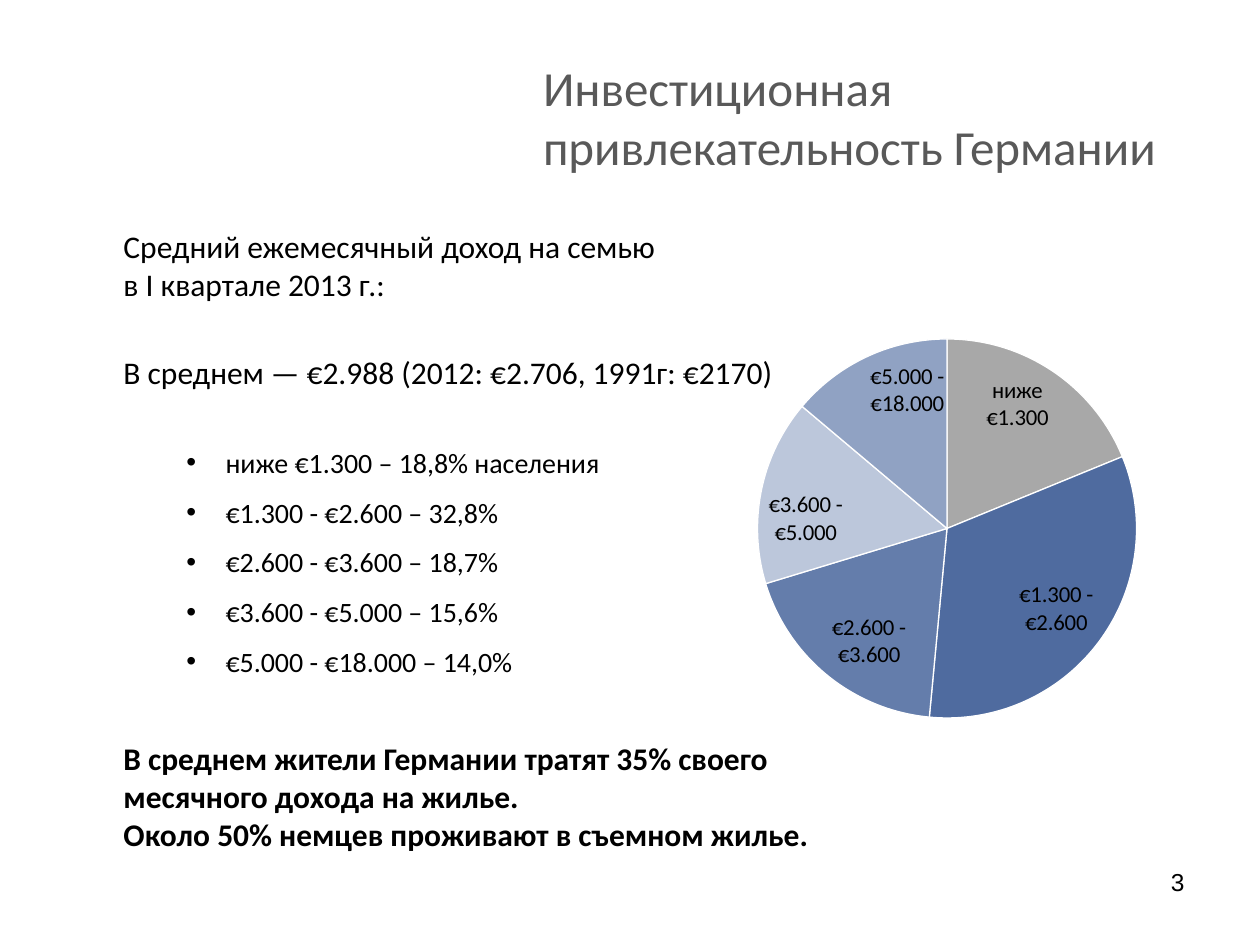
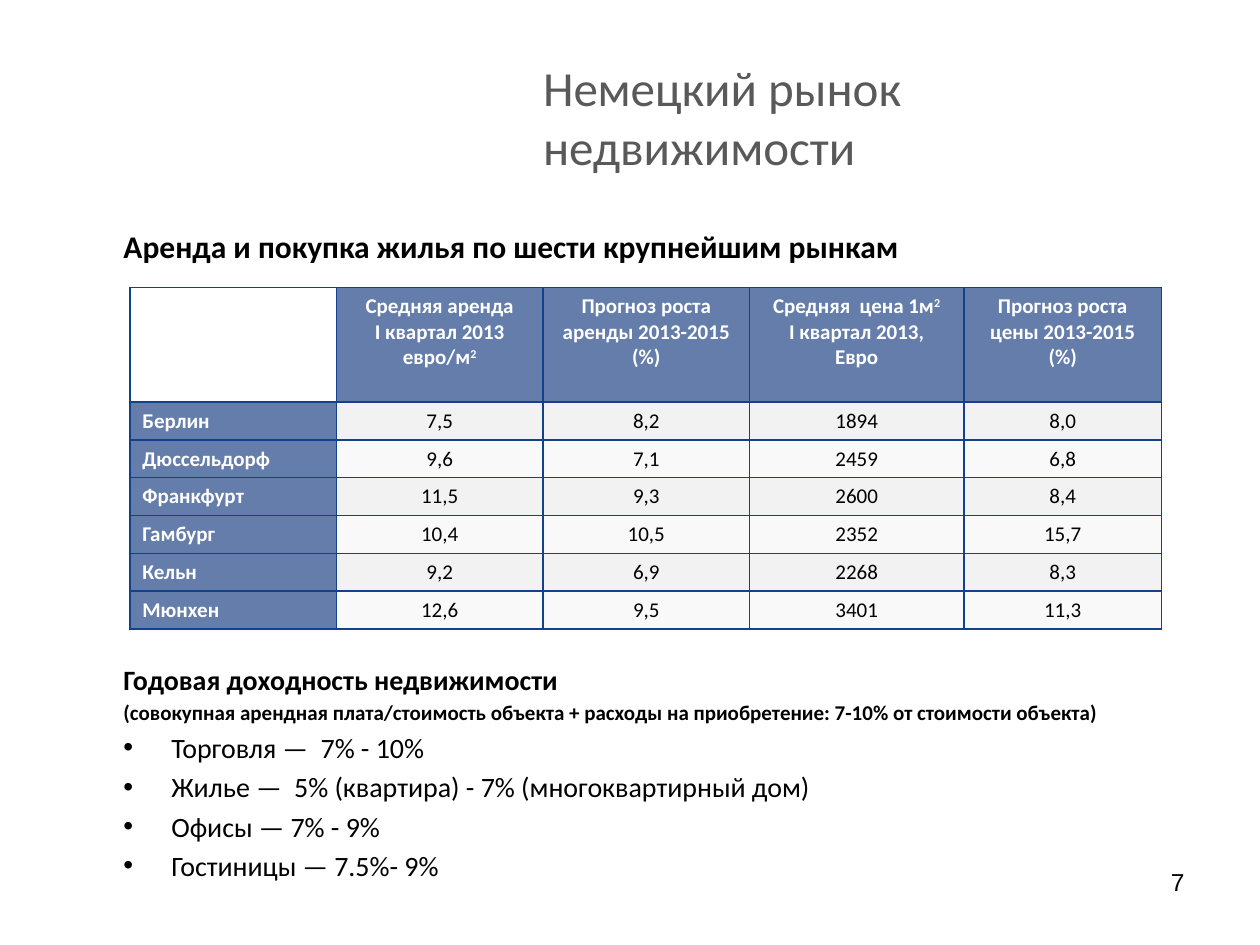
from dataclasses import dataclass

from lxml import etree
from pptx import Presentation
from pptx.chart.data import CategoryChartData
from pptx.dml.color import RGBColor
from pptx.enum.chart import XL_CHART_TYPE, XL_LABEL_POSITION
from pptx.enum.text import MSO_ANCHOR, MSO_AUTO_SIZE, PP_ALIGN
from pptx.oxml import parse_xml
from pptx.oxml.ns import nsdecls, qn
from pptx.util import Inches, Pt

PIE = XL_CHART_TYPE.PIE
INSIDE_END = XL_LABEL_POSITION.INSIDE_END
MIDDLE, TOP = MSO_ANCHOR.MIDDLE, MSO_ANCHOR.TOP
NO_AUTOFIT = MSO_AUTO_SIZE.NONE
LEFT, CENTER, RIGHT = PP_ALIGN.LEFT, PP_ALIGN.CENTER, PP_ALIGN.RIGHT

BLACK = RGBColor(0x00, 0x00, 0x00)
WHITE = RGBColor(0xFF, 0xFF, 0xFF)
TITLE_GRAY = RGBColor(0x59, 0x59, 0x59)
SLICE_GRAY = RGBColor(0xA8, 0xA8, 0xA8)
NAVY = RGBColor(0x23, 0x46, 0x88)
BORDER_BLUE = RGBColor(0x13, 0x41, 0x8B)
ROW_TINTS = (RGBColor(0xF2, 0xF2, 0xF2), RGBColor(0xF9, 0xF9, 0xF9))
HEADER_OPACITY = 70

TEXT_FONT = "Calibri"
NUMBER_FONT = "Arial"


@dataclass(frozen=True)
class Line:
    text: str
    size: float = 16
    bold: bool = False
    bullet: bool = False
    margin: float = 0
    hanging: float = 0
    before: float = 0
    after: float = 0


@dataclass(frozen=True)
class Slice:
    income: str
    share: int
    color: RGBColor
    opacity: int = 100


def income_line(text: str, before: float = 3.3) -> Line:
    return Line(text, bullet=True, margin=0.81, hanging=0.31, before=before, after=6)


def yield_line(text: str) -> Line:
    return Line(text, bullet=True, margin=0.38, hanging=0.38, before=3.2)


INCOME_LINES = (
    Line("Средний ежемесячный доход на семью\vв I квартале 2013 г.:", 18),
    Line("В среднем — €2.988 (2012: €2.706, 1991г: €2170)", 18, before=29),
    income_line("ниже €1.300 – 18,8% населения", before=31),
    income_line("€1.300 - €2.600 – 32,8%"),
    income_line("€2.600 - €3.600 – 18,7%"),
    income_line("€3.600 - €5.000 – 15,6%"),
    income_line("€5.000 - €18.000 – 14,0%"),
    Line(
        "В среднем жители Германии тратят 35% своего месячного дохода на жилье.\v"
        "Около 50% немцев проживают в съемном жилье.",
        18, bold=True, before=29,
    ),
)

INCOME_SLICES = (
    Slice("ниже €1.300", 19, SLICE_GRAY),
    Slice("€1.300 - €2.600", 33, NAVY, 80),
    Slice("€2.600 - €3.600", 19, NAVY, 70),
    Slice("€3.600 - €5.000", 16, NAVY, 30),
    Slice("€5.000 - €18.000", 14, NAVY, 50),
)

MARKET_LINES = (
    Line("Аренда и покупка жилья по шести крупнейшим рынкам", 18, bold=True),
    Line("Годовая доходность недвижимости", bold=True, before=227.5),
    Line(
        "(совокупная арендная плата/стоимость объекта + расходы на приобретение: "
        "7-10% от стоимости объекта)",
        12, bold=True, before=2,
    ),
    yield_line("Торговля —  7% - 10%"),
    yield_line("Жилье —  5% (квартира) - 7% (многоквартирный дом)"),
    yield_line("Офисы — 7% - 9%"),
    yield_line("Гостиницы — 7.5%- 9%"),
)

SUPERSCRIPT_MARK = "^"
MARKET_ROWS = (
    (
        "",
        "Средняя аренда\nI квартал 2013\nевро/м^2",
        "Прогноз роста аренды 2013-2015\n(%)",
        "Средняя  цена 1м^2\nI квартал 2013,\nЕвро",
        "Прогноз роста цены 2013-2015\n(%)",
    ),
    ("Берлин", "7,5", "8,2", "1894", "8,0"),
    ("Дюссельдорф", "9,6", "7,1", "2459", "6,8"),
    ("Франкфурт", "11,5", "9,3", "2600", "8,4"),
    ("Гамбург", "10,4", "10,5", "2352", "15,7"),
    ("Кельн", "9,2", "6,9", "2268", "8,3"),
    ("Мюнхен", "12,6", "9,5", "3401", "11,3"),
)
MARKET_WIDTHS = (1.64, 1.64, 1.64, 1.7, 1.57)
HEADER_HEIGHT, CITY_HEIGHT = 0.91, 0.3


def style_font(font, size: float, color: RGBColor, bold: bool = False, name: str = TEXT_FONT) -> None:
    font.name = name
    font.size = Pt(size)
    font.bold = bold
    font.color.rgb = color


def place(shape, left: float, top: float, width: float, height: float) -> None:
    shape.left, shape.top = Inches(left), Inches(top)
    shape.width, shape.height = Inches(width), Inches(height)


def fill_solid(fill, color: RGBColor, opacity: int = 100) -> None:
    fill.solid()
    fill.fore_color.rgb = color
    if opacity < 100:
        color_node = fill._xPr.find(qn("a:solidFill"))[0]
        etree.SubElement(color_node, qn("a:alpha")).set("val", str(opacity * 1000))


def write_line(paragraph, line: Line) -> None:
    paragraph.text = line.text
    paragraph.alignment = LEFT
    properties = paragraph._p.get_or_add_pPr()
    properties.set("marL", str(Inches(line.margin)))
    properties.set("indent", str(-Inches(line.hanging)))
    if line.bullet:
        etree.SubElement(properties, qn("a:buChar")).set("char", "•")
    else:
        etree.SubElement(properties, qn("a:buNone"))
    paragraph.space_before = Pt(line.before)
    paragraph.space_after = Pt(line.after)
    for run in paragraph.runs:
        style_font(run.font, line.size, BLACK, line.bold)


def add_page(deck, heading: str, lines: tuple[Line, ...], body_size: tuple[float, float], number: int):
    slide = deck.slides.add_slide(deck.slide_layouts[1])
    title = slide.shapes.title
    place(title, 4.21, 0.3, 5.29, 1.25)
    title.text_frame.text = heading
    title.text_frame.auto_size = NO_AUTOFIT
    title.text_frame.vertical_anchor = MIDDLE
    title_line = title.text_frame.paragraphs[0]
    title_line.alignment = LEFT
    style_font(title_line.runs[0].font, 28, TITLE_GRAY)

    body = slide.placeholders[1]
    place(body, 0.88, 1.75, *body_size)
    frame = body.text_frame
    frame.auto_size = NO_AUTOFIT
    frame.vertical_anchor = TOP
    for index, line in enumerate(lines):
        write_line(frame.add_paragraph() if index else frame.paragraphs[0], line)

    page_box = slide.shapes.add_textbox(Inches(7.17), Inches(6.83), Inches(2.33), Inches(0.52))
    page_box.text_frame.word_wrap = True
    page_box.text_frame.text = str(number)
    page_line = page_box.text_frame.paragraphs[0]
    page_line.alignment = RIGHT
    style_font(page_line.runs[0].font, 14, BLACK, name=NUMBER_FONT)
    return slide


def set_plot_layout(chart, x: float, y: float, width: float, height: float) -> None:
    plot_area = chart._chartSpace.chart.plotArea
    for old_layout in plot_area.findall(qn("c:layout")):
        plot_area.remove(old_layout)
    plot_area.insert(0, parse_xml(
        f'<c:layout {nsdecls("c")}><c:manualLayout><c:layoutTarget val="inner"/>'
        '<c:xMode val="edge"/><c:yMode val="edge"/>'
        f'<c:x val="{x}"/><c:y val="{y}"/><c:w val="{width}"/><c:h val="{height}"/>'
        "</c:manualLayout></c:layout>"
    ))


def label_slice(point, income: str) -> None:
    label = point.data_label
    label.text_frame.text = "\n".join(income.rsplit(" ", 1))
    label.position = INSIDE_END
    for paragraph in label.text_frame.paragraphs:
        style_font(paragraph.runs[0].font, 13, BLACK)


def add_income_chart(slide) -> None:
    data = CategoryChartData()
    data.categories = [part.income for part in INCOME_SLICES]
    data.add_series("Series 1", [part.share for part in INCOME_SLICES])
    chart = slide.shapes.add_chart(
        PIE, Inches(4.59), Inches(1.8), Inches(5.47), Inches(4.79), data
    ).chart
    chart.has_title = False
    chart.has_legend = False
    style_font(chart.font, 18, BLACK, name=NUMBER_FONT)
    set_plot_layout(chart, 0.26, 0.09, 0.55, 0.82)

    plot = chart.plots[0]
    plot.vary_by_categories = True
    for index, part in enumerate(INCOME_SLICES):
        point = plot.series[0].points[index]
        fill_solid(point.format.fill, part.color, part.opacity)
        point.format.line.color.rgb = WHITE
        point.format.line.width = Pt(0.75)
        label_slice(point, part.income)


def add_borders(cell) -> None:
    properties = cell._tc.get_or_add_tcPr()
    for side in ("lnL", "lnR", "lnT", "lnB"):
        properties.append(parse_xml(
            f'<a:{side} {nsdecls("a")} w="{Pt(1)}"><a:solidFill>'
            f'<a:srgbClr val="{BORDER_BLUE}"/></a:solidFill></a:{side}>'
        ))


def write_cell(cell, text: str, row: int, column: int) -> None:
    heading = row == 0 or column == 0
    add_borders(cell)
    if row == column == 0:
        fill_solid(cell.fill, WHITE)
        return
    if heading:
        fill_solid(cell.fill, NAVY, HEADER_OPACITY)
    else:
        fill_solid(cell.fill, ROW_TINTS[(row - 1) % 2])
    cell.text_frame.text = text
    for paragraph in cell.text_frame.paragraphs:
        base, mark, power = paragraph.text.partition(SUPERSCRIPT_MARK)
        paragraph.text = base
        if mark:
            exponent = paragraph.add_run()
            exponent.text = power
            exponent.font._element.set("baseline", "30000")
        paragraph.alignment = CENTER if column else LEFT
        for run in paragraph.runs:
            style_font(run.font, 12, WHITE if heading else BLACK, heading)


def add_market_table(slide) -> None:
    heights = [HEADER_HEIGHT] + [CITY_HEIGHT] * (len(MARKET_ROWS) - 1)
    table = slide.shapes.add_table(
        len(MARKET_ROWS), len(MARKET_WIDTHS), Inches(1.03), Inches(2.28),
        Inches(sum(MARKET_WIDTHS)), Inches(sum(heights)),
    ).table
    for column, width in zip(table.columns, MARKET_WIDTHS):
        column.width = Inches(width)
    for row, height in zip(table.rows, heights):
        row.height = Inches(height)
    for row_index, texts in enumerate(MARKET_ROWS):
        for column_index, text in enumerate(texts):
            write_cell(table.cell(row_index, column_index), text, row_index, column_index)


def main() -> None:
    deck = Presentation()
    deck.slide_width, deck.slide_height = Inches(10), Inches(7.5)
    income_slide = add_page(
        deck, "Инвестиционная привлекательность Германии", INCOME_LINES, (6.29, 5.08), 3
    )
    add_income_chart(income_slide)
    market_slide = add_page(
        deck, "Немецкий рынок недвижимости", MARKET_LINES, (8.62, 5.6), 7
    )
    add_market_table(market_slide)
    deck.save("out.pptx")


if __name__ == "__main__":
    main()
